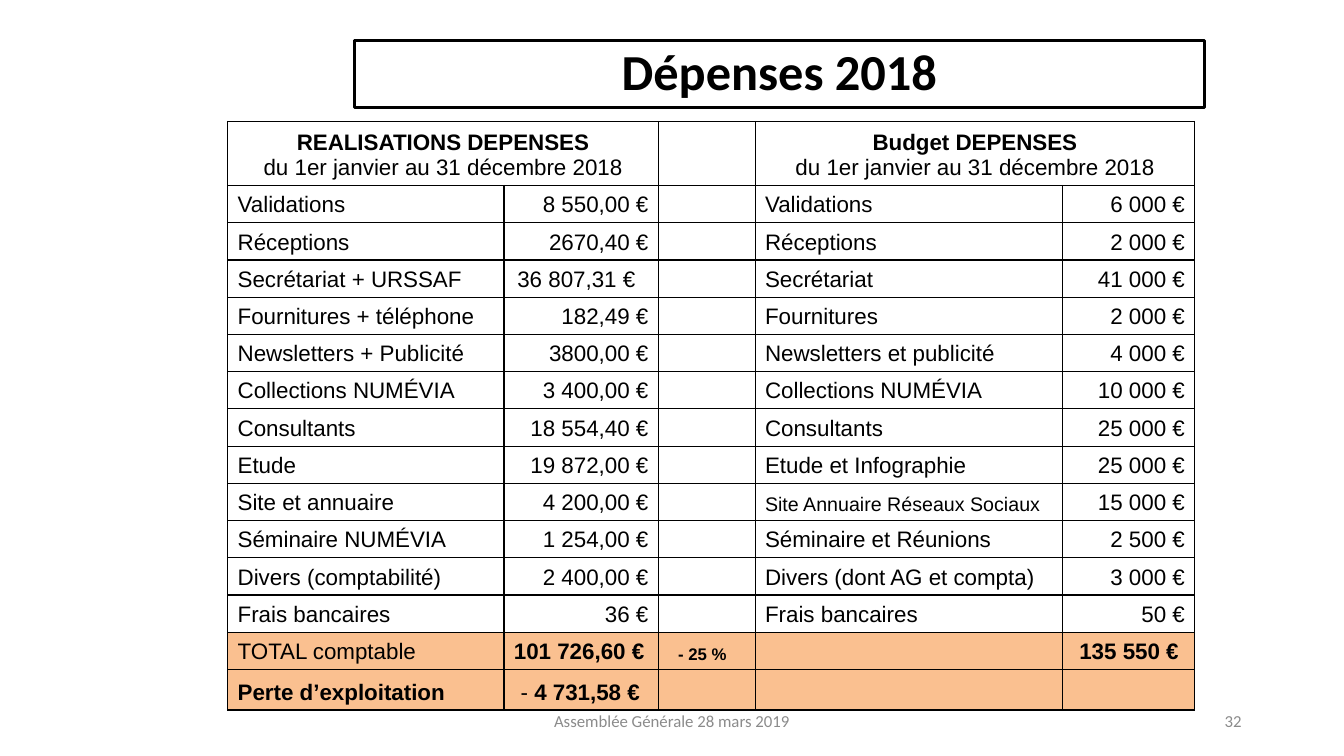
from lxml import etree
from pptx import Presentation
from pptx.dml.color import RGBColor
from pptx.enum.text import MSO_ANCHOR, MSO_AUTO_SIZE, PP_ALIGN
from pptx.oxml.ns import qn
from pptx.util import Cm, Pt

LEFT, CENTER, RIGHT = PP_ALIGN.LEFT, PP_ALIGN.CENTER, PP_ALIGN.RIGHT
MIDDLE, BOTTOM = MSO_ANCHOR.MIDDLE, MSO_ANCHOR.BOTTOM
NO_AUTOFIT = MSO_AUTO_SIZE.NONE

BLACK = RGBColor(0x00, 0x00, 0x00)
GREY = RGBColor(0x8B, 0x8B, 0x8B)
ORANGE = RGBColor(0xFA, 0xC0, 0x90)

COLUMN_WIDTHS = [6.96, 3.89, 2.44, 7.75, 3.33]
HEADER_HEIGHT, ROW_HEIGHT, LAST_HEIGHT = 1.6, 0.92, 1.02
PERIOD = "du 1er janvier au 31 décembre 2018"
HEADINGS = {0: "REALISATIONS DEPENSES", 3: "Budget DEPENSES"}
EXPENSES = [
    ("Validations", "8 550,00 €", "Validations", "6 000 €"),
    ("Réceptions", "2670,40 €", "Réceptions", "2 000 €"),
    ("Secrétariat + URSSAF", "36 807,31 €", "Secrétariat", "41 000 €"),
    ("Fournitures + téléphone", "182,49 €", "Fournitures", "2 000 €"),
    ("Newsletters + Publicité", "3800,00 €", "Newsletters et publicité", "4 000 €"),
    ("Collections NUMÉVIA", "3 400,00 €", "Collections NUMÉVIA", "10 000 €"),
    ("Consultants", "18 554,40 €", "Consultants", "25 000 €"),
    ("Etude", "19 872,00 €", "Etude et Infographie", "25 000 €"),
    ("Site et annuaire", "4 200,00 €", "Site Annuaire Réseaux Sociaux", "15 000 €"),
    ("Séminaire NUMÉVIA", "1 254,00 €", "Séminaire et Réunions", "2 500 €"),
    ("Divers (comptabilité)", "2 400,00 €", "Divers (dont AG et compta)", "3 000 €"),
    ("Frais bancaires", "36 €", "Frais bancaires", "50 €"),
]
SMALL_LABEL = "Site Annuaire Réseaux Sociaux"
SHIFTED_AMOUNT = "36 807,31 €"
TOTAL_ROW = len(EXPENSES) + 1
LOSS_ROW = TOTAL_ROW + 1


def apply_format(target, values):
    for name, value in values.items():
        setattr(target, name, value)


def add_run(paragraph, text, size, bold=False, color=BLACK, name="Arial"):
    run = paragraph.add_run()
    run.text = text
    apply_format(run.font, {"size": Pt(size), "bold": bold, "name": name})
    run.font.color.rgb = color


def add_title(slide, text):
    title = slide.shapes.title
    apply_format(title, {"left": Cm(8.94), "top": Cm(1.02),
                         "width": Cm(21.41), "height": Cm(1.68)})
    title.line.color.rgb = BLACK
    title.line.width = Pt(2)
    apply_format(title.text_frame, {"auto_size": NO_AUTOFIT, "word_wrap": True,
                                    "vertical_anchor": MIDDLE})
    paragraph = title.text_frame.paragraphs[0]
    apply_format(paragraph, {"alignment": CENTER, "line_spacing": 0.9})
    add_run(paragraph, text, 36, True, name="Calibri")


def add_footer_text(slide, text, left, width, alignment):
    box = slide.shapes.add_textbox(Cm(left), Cm(17.65), Cm(width), Cm(1.02))
    apply_format(box.text_frame, {"word_wrap": True, "vertical_anchor": MIDDLE})
    paragraph = box.text_frame.paragraphs[0]
    paragraph.alignment = alignment
    add_run(paragraph, text, 12, color=GREY, name="Calibri")


def set_borders(cell):
    properties = cell._tc.get_or_add_tcPr()
    for position, side in enumerate(("a:lnL", "a:lnR", "a:lnT", "a:lnB")):
        line = etree.Element(qn(side), w=str(Pt(1)))
        fill = etree.SubElement(line, qn("a:solidFill"))
        etree.SubElement(fill, qn("a:srgbClr"), val=str(BLACK))
        properties.insert(position, line)


def format_cell(cell, filled):
    apply_format(cell, {"vertical_anchor": BOTTOM,
                        "margin_left": Cm(0.25), "margin_right": Cm(0.25),
                        "margin_top": Cm(0.13), "margin_bottom": Cm(0.13)})
    if filled:
        cell.fill.solid()
        cell.fill.fore_color.rgb = ORANGE
    else:
        cell.fill.background()
    set_borders(cell)


def write_cell(cell, text, alignment=LEFT, size=16, bold=False, **margins):
    paragraph = cell.text_frame.paragraphs[0]
    paragraph.alignment = alignment
    add_run(paragraph, text, size, bold)
    apply_format(cell, margins)


def shrink_empty_cell(cell):
    if not cell.text_frame.text:
        paragraph = cell.text_frame.paragraphs[0]
        etree.SubElement(paragraph._p, qn("a:endParaRPr"), sz="1200")


def write_headings(table):
    for column, heading in HEADINGS.items():
        cell = table.cell(0, column)
        cell.merge(table.cell(0, column + 1))
        write_cell(cell, heading, CENTER, bold=True)
        paragraph = cell.text_frame.paragraphs[0]
        paragraph.add_line_break()
        add_run(paragraph, PERIOD, 16)


def write_expenses(table):
    for row, values in enumerate(EXPENSES, 1):
        for column, text in zip((0, 1, 3, 4), values):
            alignment = RIGHT if column in (1, 4) else LEFT
            size = 14 if text == SMALL_LABEL else 16
            write_cell(table.cell(row, column), text, alignment, size)
            if text == SHIFTED_AMOUNT:
                table.cell(row, column).margin_right = Cm(0.58)


def write_totals(table):
    write_cell(table.cell(TOTAL_ROW, 0), "TOTAL comptable")
    write_cell(table.cell(TOTAL_ROW, 1), "101 726,60 €", bold=True, margin_right=Cm(0.1))
    write_cell(table.cell(TOTAL_ROW, 2), "- 25 %", size=12, bold=True, margin_left=Cm(0.5))
    write_cell(table.cell(TOTAL_ROW, 4), "135 550 €", bold=True, margin_left=Cm(0.42))
    write_cell(table.cell(LOSS_ROW, 0), "Perte d’exploitation", bold=True)
    loss = table.cell(LOSS_ROW, 1)
    write_cell(loss, "- ", margin_left=Cm(0.42))
    add_run(loss.text_frame.paragraphs[0], "4 731,58 €", 16, True)


def add_expense_table(slide):
    heights = [HEADER_HEIGHT] + [ROW_HEIGHT] * TOTAL_ROW + [LAST_HEIGHT]
    frame = slide.shapes.add_table(len(heights), len(COLUMN_WIDTHS), Cm(5.74), Cm(3.06),
                                   Cm(sum(COLUMN_WIDTHS)), Cm(sum(heights)))
    table = frame.table
    apply_format(table, {"first_row": False, "horz_banding": False})
    for column, width in zip(table.columns, COLUMN_WIDTHS):
        column.width = Cm(width)
    for index, height in enumerate(heights):
        table.rows[index].height = Cm(height)
        for cell in table.rows[index].cells:
            format_cell(cell, index >= TOTAL_ROW)
    write_headings(table)
    write_expenses(table)
    write_totals(table)
    for cell in table.iter_cells():
        shrink_empty_cell(cell)


def main():
    presentation = Presentation()
    presentation.slide_width = Cm(33.87)
    presentation.slide_height = Cm(19.05)
    slide = presentation.slides.add_slide(presentation.slide_layouts[5])
    add_title(slide, "Dépenses 2018")
    add_footer_text(slide, "Assemblée Générale 28 mars 2019", 11.22, 11.43, CENTER)
    add_footer_text(slide, "32", 23.92, 7.62, RIGHT)
    add_expense_table(slide)
    presentation.save("out.pptx")


if __name__ == "__main__":
    main()
